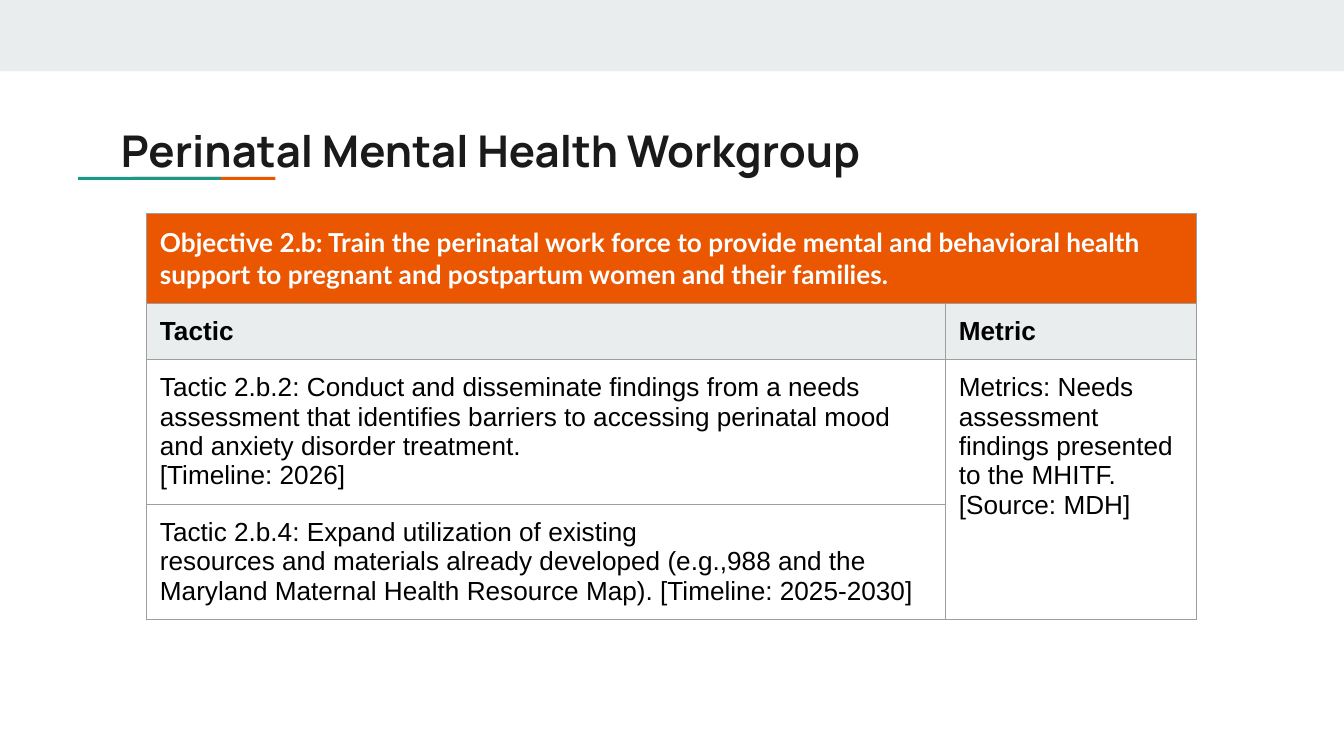
import pptx
import pptx.util
import pptx.dml.color
import pptx.enum.shapes
import pptx.enum.text
import pptx.oxml
import pptx.oxml.ns

Pt = pptx.util.Pt

TITLE = "Perinatal Mental Health Workgroup"
OBJECTIVE = (
    "Objective 2.b: Train the perinatal work force to provide mental and "
    "behavioral health support to pregnant and postpartum women and their families."
)
TACTIC_ROWS = [
    (OBJECTIVE, ""),
    ("Tactic", "Metric"),
    (
        "Tactic 2.b.2: Conduct and disseminate findings from a needs assessment that "
        "identifies barriers to accessing perinatal mood and anxiety disorder treatment.\n"
        "[Timeline: 2026]",
        "Metrics: Needs assessment findings presented to the MHITF. [Source: MDH]",
    ),
    (
        "Tactic 2.b.4: Expand utilization of existing\n"
        "resources and materials already developed (e.g.,988 and the Maryland Maternal "
        "Health Resource Map). [Timeline: 2025-2030]",
        "",
    ),
]
OBJECTIVE_STYLE = {"font": "Lato", "bold": True, "color": "FFFFFF", "fill": "EB5600"}
HEADING_STYLE = {"font": "Arial", "bold": True, "color": "000000", "fill": "E9EDEE"}
BODY_STYLE = {"font": "Arial", "bold": False, "color": "000000", "fill": None}
ROW_STYLES = [OBJECTIVE_STYLE, HEADING_STYLE, BODY_STYLE, BODY_STYLE]
COLUMN_WIDTHS = [428, 134.5]
ROW_HEIGHTS = [48, 30, 77.5, 61]
BANDS = [
    (0, 0, 720, 38.2, "E9EDEE"),
    (71, 94.8, 76.5, 1.6, "EB5600"),
    (41.8, 94.8, 76.5, 1.6, "1A9988"),
]
MARGINS = dict.fromkeys(["margin_left", "margin_top", "margin_right", "margin_bottom"], Pt(7.2))


def rgb(value):
    return pptx.dml.color.RGBColor.from_string(value)


def set_all(target, values):
    for name, value in values.items():
        setattr(target, name, value)


def style_text(frame, font, size, bold, color):
    for paragraph in frame.paragraphs:
        paragraph.alignment = pptx.enum.text.PP_ALIGN.LEFT
        set_all(paragraph.font, {"name": font, "size": Pt(size), "bold": bold})
        paragraph.font.color.rgb = rgb(color)


def add_borders(cell):
    properties = cell._tc.get_or_add_tcPr()
    for side in ("lnL", "lnR", "lnT", "lnB"):
        properties.append(pptx.oxml.parse_xml(
            f'<a:{side} {pptx.oxml.ns.nsdecls("a")} w="{Pt(0.75)}">'
            f'<a:solidFill><a:srgbClr val="9E9E9E"/></a:solidFill></a:{side}>'
        ))


def add_band(slide, left, top, width, height, color):
    band = slide.shapes.add_shape(
        pptx.enum.shapes.MSO_SHAPE.RECTANGLE, Pt(left), Pt(top), Pt(width), Pt(height))
    band.shadow.inherit = False
    band.fill.solid()
    band.fill.fore_color.rgb = rgb(color)
    band.line.fill.background()


def add_title(slide):
    title = slide.shapes.title
    set_all(title, {"left": Pt(57.6), "top": Pt(59), "width": Pt(605.5), "height": Pt(42.5)})
    frame = title.text_frame
    frame.text = TITLE
    set_all(frame, {
        **MARGINS,
        "word_wrap": True,
        "auto_size": pptx.enum.text.MSO_AUTO_SIZE.NONE,
        "vertical_anchor": pptx.enum.text.MSO_ANCHOR.MIDDLE,
    })
    style_text(frame, "Manrope", 23.4, True, "1A1A1A")
    slide.shapes._spTree.append(title._element)


def add_tactics(slide):
    tactics = slide.shapes.add_table(
        len(TACTIC_ROWS), len(COLUMN_WIDTHS), Pt(78.5), Pt(114.5),
        Pt(sum(COLUMN_WIDTHS)), Pt(sum(ROW_HEIGHTS))).table
    set_all(tactics, {"first_row": False, "horz_banding": False})
    for column, width in zip(tactics.columns, COLUMN_WIDTHS):
        column.width = Pt(width)
    for row, height, texts, style in zip(tactics.rows, ROW_HEIGHTS, TACTIC_ROWS, ROW_STYLES):
        row.height = Pt(height)
        for cell, text in zip(row.cells, texts):
            cell.text = text
            set_all(cell, MARGINS)
            add_borders(cell)
            if style["fill"]:
                cell.fill.solid()
                cell.fill.fore_color.rgb = rgb(style["fill"])
            else:
                cell.fill.background()
            style_text(cell.text_frame, style["font"], 14, style["bold"], style["color"])
    tactics.cell(0, 0).merge(tactics.cell(0, 1))
    tactics.cell(2, 1).merge(tactics.cell(3, 1))


def main():
    deck = pptx.Presentation()
    set_all(deck, {"slide_width": Pt(720), "slide_height": Pt(405)})
    slide = deck.slides.add_slide(deck.slide_layouts[5])
    for band in BANDS:
        add_band(slide, *band)
    add_title(slide)
    add_tactics(slide)
    deck.save("out.pptx")


if __name__ == "__main__":
    main()
